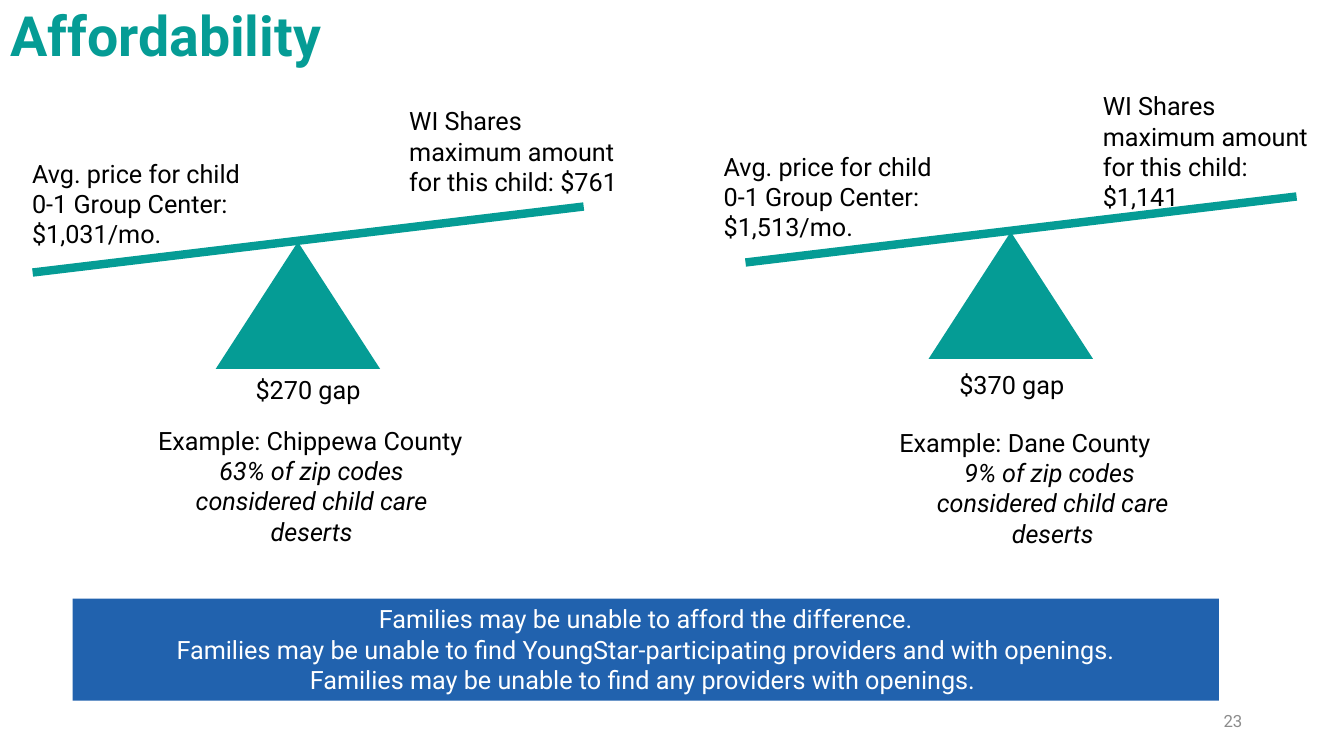
from dataclasses import dataclass

from pptx import Presentation
from pptx.dml.color import RGBColor
from pptx.enum.shapes import MSO_CONNECTOR, MSO_SHAPE
from pptx.enum.text import MSO_ANCHOR as Anchor, PP_ALIGN as Align
from pptx.oxml.ns import qn
from pptx.slide import Slide
from pptx.text.text import TextFrame
from pptx.util import Inches, Pt
from lxml.etree import SubElement

TEAL = RGBColor(0x05, 0x9C, 0x95)
BLUE = RGBColor(0x21, 0x62, 0xAE)
BLACK = RGBColor(0, 0, 0)
WHITE = RGBColor(0xFF, 0xFF, 0xFF)
GRAY = RGBColor(0x8C, 0x8C, 0x8C)

WIDTH, HEIGHT = Inches(13.33), Inches(7.5)
FULCRUM_SIZE = (12.23, 16.8)
BEAM_OFFSET = (-13.62, 4.05)
BEAM_RUN, BEAM_RISE = 41, 8.73
LABEL_WIDTH = 18.3
LINE_HEIGHT, THREE_LINES, FOUR_LINES = 5.33, 13.47, 17.47


@dataclass
class Label:
    text: str
    left: float
    top: float
    height: float = THREE_LINES


@dataclass
class Seesaw:
    fulcrum: tuple[float, float]
    price: Label
    subsidy: Label
    gap: Label
    county: Label
    deserts: list[str]


SEESAWS = [
    Seesaw(
        fulcrum=(69.09, 30.67),
        price=Label("Avg. price for child 0-1 Group Center: $1,513/mo.", 53.11, 19.33),
        subsidy=Label("WI Shares maximum amount for this child: $1,141", 81.32, 11.33, FOUR_LINES),
        gap=Label("$370 gap", 65.19, 48.13, LINE_HEIGHT),
        county=Label("Example: Dane County", 66.17, 55.87, FOUR_LINES),
        deserts=["9% of zip codes ", "considered child care deserts"],
    ),
    Seesaw(
        fulcrum=(16.05, 32),
        price=Label("Avg. price for child 0-1 Group Center: $1,031/mo.", 1.65, 20.27),
        subsidy=Label("WI Shares maximum amount for this child: $761", 29.71, 13.33),
        gap=Label("$270 gap", 12.83, 48.8, LINE_HEIGHT),
        county=Label("Example: Chippewa County", 11.03, 55.6, FOUR_LINES),
        deserts=["63% of zip codes considered child care deserts"],
    ),
]
CONSEQUENCES = [
    "Families may be unable to afford the difference.",
    "Families may be unable to find YoungStar-participating providers and with openings.",
    "Families may be unable to find any providers with openings. ",
]


def place(left: float, top: float, width: float, height: float) -> tuple[int, ...]:
    shares = ((left, WIDTH), (top, HEIGHT), (width, WIDTH), (height, HEIGHT))
    return tuple(round(share / 100 * whole) for share, whole in shares)


def write(frame: TextFrame, text: str, *, size: float = 18, color: RGBColor = BLACK,
          bold: bool = False, italic: bool = False, align: Align = Align.LEFT,
          anchor: Anchor = Anchor.TOP, spacing: float = 1.0) -> None:
    frame.word_wrap = True
    frame.vertical_anchor = anchor
    paragraph = frame.paragraphs[0] if not frame.text else frame.add_paragraph()
    paragraph.alignment = align
    paragraph.line_spacing = spacing
    run = paragraph.add_run()
    run.text = text
    run.font.name = "Roboto"
    run.font.size = Pt(size)
    run.font.bold = bold
    run.font.italic = italic
    run.font.color.rgb = color


def add_label(slide: Slide, label: Label, width: float = LABEL_WIDTH,
              align: Align = Align.LEFT) -> TextFrame:
    box = slide.shapes.add_textbox(*place(label.left, label.top, width, label.height))
    write(box.text_frame, label.text, align=align)
    return box.text_frame


def add_block(slide: Slide, kind: MSO_SHAPE, area: tuple[int, ...], color: RGBColor) -> TextFrame:
    block = slide.shapes.add_shape(kind, *area)
    block.shadow.inherit = False
    block.fill.solid()
    block.fill.fore_color.rgb = color
    block.line.fill.background()
    return block.text_frame


def add_seesaw(slide: Slide, seesaw: Seesaw) -> None:
    add_block(slide, MSO_SHAPE.ISOSCELES_TRIANGLE, place(*seesaw.fulcrum, *FULCRUM_SIZE), TEAL)
    left, low = (base + shift for base, shift in zip(seesaw.fulcrum, BEAM_OFFSET))
    ends = place(left, low, left + BEAM_RUN, low - BEAM_RISE)
    beam = slide.shapes.add_connector(MSO_CONNECTOR.STRAIGHT, *ends)
    beam.line.color.rgb = TEAL
    beam.line.width = Pt(6)
    SubElement(beam._element.spPr, qn("a:effectLst"))
    add_label(slide, seesaw.price)
    add_label(slide, seesaw.subsidy)
    add_label(slide, seesaw.gap, width=20.18, align=Align.CENTER)
    example = add_label(slide, seesaw.county, width=24.31)
    for line in seesaw.deserts:
        write(example, line, italic=True, align=Align.CENTER)


def main() -> None:
    deck = Presentation()
    deck.slide_width, deck.slide_height = WIDTH, HEIGHT
    slide = deck.slides.add_slide(deck.slide_layouts[5])

    title = slide.shapes.title
    title.left, title.top, title.width, title.height = place(0, 0.27, 86.27, 9.6)
    write(title.text_frame, "Affordability", size=39.6, color=TEAL, bold=True,
          anchor=Anchor.MIDDLE, spacing=0.9)

    banner = add_block(slide, MSO_SHAPE.RECTANGLE, place(5.4, 79.2, 85.3, THREE_LINES), BLUE)
    for consequence in CONSEQUENCES:
        write(banner, consequence, color=WHITE, align=Align.CENTER)

    for seesaw in SEESAWS:
        add_seesaw(slide, seesaw)

    page = slide.shapes.add_textbox(*place(70.67, 92.67, 22.51, LINE_HEIGHT))
    write(page.text_frame, "23", size=12, color=GRAY, align=Align.RIGHT, anchor=Anchor.MIDDLE)
    deck.save("out.pptx")


if __name__ == "__main__":
    main()
